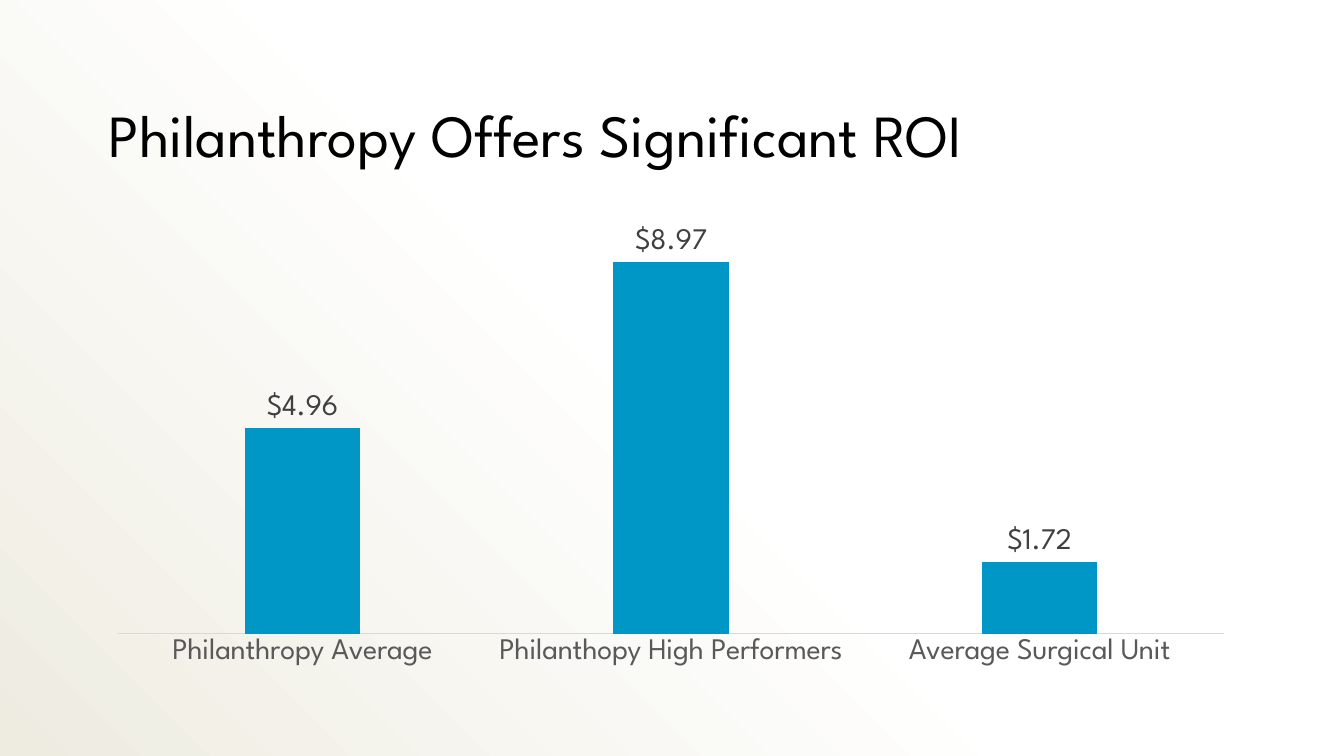
import lxml.etree
import pptx
import pptx.chart.data
import pptx.dml.color
import pptx.enum.chart
import pptx.enum.text
import pptx.oxml
import pptx.oxml.ns
import pptx.util

Pt = pptx.util.Pt
FONT = "League Spartan"
DOLLARS = '"$"#,##0.00'


def color(hex_code):
    return pptx.dml.color.RGBColor.from_string(hex_code)


def style_font(font, size, hex_code):
    font.name = FONT
    font.size = Pt(size)
    font.bold = False
    font.color.rgb = color(hex_code)


deck = pptx.Presentation()
deck.slide_width, deck.slide_height = Pt(720), Pt(405)
slide = deck.slides.add_slide(deck.slide_layouts[6])

# Background: circular gradient centred on the top right corner
background = slide.background.fill
background.gradient()
stops = "".join(
    f'<a:gs pos="{percent * 1000}"><a:srgbClr val="{hex_code}"/></a:gs>'
    for percent, hex_code in [(0, "FFFFFF"), (50, "FFFFFF"), (100, "EEECE1")]
)
glow = pptx.oxml.parse_xml(
    f'<a:gradFill {pptx.oxml.ns.nsdecls("a")} rotWithShape="1"><a:gsLst>{stops}</a:gsLst>'
    '<a:path path="circle"><a:fillToRect l="100000" b="100000"/></a:path></a:gradFill>'
)
old_gradient = slide.element.find(".//" + pptx.oxml.ns.qn("a:gradFill"))
old_gradient.getparent().replace(old_gradient, glow)

# Return on investment chart
roi = pptx.chart.data.CategoryChartData(number_format=DOLLARS)
roi.categories = ["Philanthropy Average", "Philanthopy High Performers", "Average Surgical Unit"]
roi.add_series("Series 1", [4.96, 8.97, 1.72])
chart = slide.shapes.add_chart(
    pptx.enum.chart.XL_CHART_TYPE.COLUMN_CLUSTERED,
    Pt(51), Pt(112.3), Pt(617), Pt(250), roi,
).chart
chart.has_legend = False
chart.has_title = False
style_font(chart.font, 16, "000000")

# Bars and their values
bars = chart.plots[0]
bars.gap_width = 219
bars.overlap = -27
bars.vary_by_categories = False
bar_fill = bars.series[0].format.fill
bar_fill.solid()
bar_fill.fore_color.rgb = color("0097C7")
bars.has_data_labels = True
amounts = bars.data_labels
amounts.show_value = True
amounts.number_format = DOLLARS
amounts.number_format_is_linked = False
amounts.position = pptx.enum.chart.XL_LABEL_POSITION.OUTSIDE_END
style_font(amounts.font, 16, "404040")

# Axes
groups = chart.category_axis
groups.major_tick_mark = pptx.enum.chart.XL_TICK_MARK.NONE
groups.format.line.color.rgb = color("D9D9D9")
groups.format.line.width = Pt(0.75)
style_font(groups.tick_labels.font, 16, "595959")
dollars_axis = chart.value_axis
dollars_axis.minimum_scale = 0
dollars_axis.maximum_scale = 10
dollars_axis.has_major_gridlines = False
dollars_axis.visible = False

# Title
title = slide.shapes.add_textbox(Pt(51), Pt(49.7), Pt(543), Pt(44.6)).text_frame
title.word_wrap = True
title.vertical_anchor = pptx.enum.text.MSO_ANCHOR.BOTTOM
headline = title.paragraphs[0].add_run()
headline.text = "Philanthropy Offers Significant ROI"
style_font(headline.font, 32, "000000")

deck.save("out.pptx")
